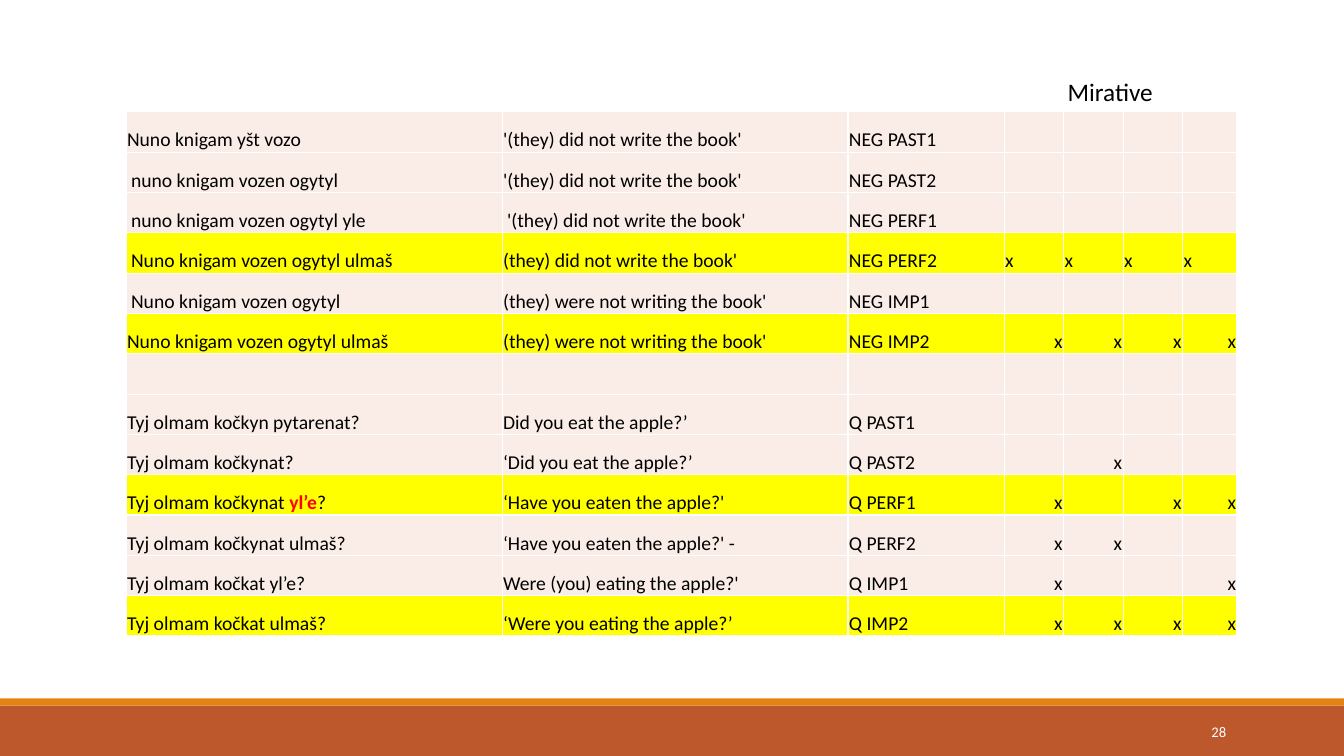
"""Build a slide with a table of negated and interrogative verb forms marked for mirativity."""
import dataclasses

import lxml.etree
import pptx
import pptx.dml.color
import pptx.enum.shapes
import pptx.enum.text
import pptx.oxml.ns
import pptx.util

Inches = pptx.util.Inches
Align = pptx.enum.text.PP_ALIGN
Anchor = pptx.enum.text.MSO_ANCHOR


@dataclasses.dataclass(frozen=True)
class Theme:
    font: str = "Calibri"
    ink: str = "000000"
    white: str = "FFFFFF"
    accent: str = "FF0000"
    plain_row: str = "FAEDE7"
    marked_row: str = "FFFF00"
    footer: str = "BD582C"
    stripe: str = "E48312"
    table_size: float = 14
    heading_size: float = 18
    number_size: float = 10.5


THEME = Theme()
SLIDE_SIZE = (13.33, 7.5)
HEADING = "Mirative"
PAGE_NUMBER = "28"

ROWS = [
    ("Nuno knigam yšt vozo", "'(they) did not write the book'", "NEG PAST1", "----"),
    ("nuno knigam vozen ogytyl", "'(they) did not write the book'", "NEG PAST2", "----"),
    ("nuno knigam vozen ogytyl yle", "'(they) did not write the book'", "NEG PERF1", "----"),
    ("Nuno knigam vozen ogytyl ulmaš", "(they) did not write the book'", "NEG PERF2", "xxxx"),
    ("Nuno knigam vozen ogytyl", "(they) were not writing the book'", "NEG IMP1", "----"),
    ("Nuno knigam vozen ogytyl ulmaš", "(they) were not writing the book'", "NEG IMP2", "xxxx"),
    ("", "", "", "----"),
    ("Tyj olmam kočkyn pytarenat?", "Did you eat the apple?’", "Q PAST1", "----"),
    ("Tyj olmam kočkynat?", "‘Did you eat the apple?’", "Q PAST2", "-x--"),
    ("Tyj olmam kočkynat |yl’e|?", "‘Have you eaten the apple?'", "Q PERF1", "x-xx"),
    ("Tyj olmam kočkynat ulmaš?", "‘Have you eaten the apple?' -", "Q PERF2", "xx--"),
    ("Tyj olmam kočkat yl’e?", "Were (you) eating the apple?'", "Q IMP1", "x--x"),
    ("Tyj olmam kočkat ulmaš?", "‘Were you eating the apple?’", "Q IMP2", "xxxx"),
]
HIGHLIGHTED = {3, 5, 9, 12}
LEFT_MARKS = {3}
INDENTED = {(1, 0), (2, 0), (2, 1), (3, 0), (4, 0)}

TABLE_AT = (1.25, 1.11)
COLUMN_WIDTHS = [3.73, 3.43, 1.55, 0.59, 0.59, 0.59, 0.54]
ROW_HEIGHT = 0.4
TEXT_COLUMNS = 3
CELL_MARGIN = 0.01
CELL_INDENT = 0.05
BORDER_WIDTH = 1

BANDS = [
    ((0, 7, 13.33, 0.5), THEME.footer),
    ((0, 6.93, 13.33, 0.07), THEME.stripe),
]
LABELS = [
    (PAGE_NUMBER, (10.83, 7.06, 1.43, 0.4), THEME.number_size, THEME.white,
     {"word_wrap": True, "vertical_anchor": Anchor.MIDDLE}, Align.RIGHT),
    (HEADING, (10.49, 0.71, 1.06, 0.4), THEME.heading_size, THEME.ink,
     {"word_wrap": False, "vertical_anchor": Anchor.TOP}, Align.LEFT),
]


def rgb(value):
    return pptx.dml.color.RGBColor.from_string(value)


def apply(target, values):
    for name, value in values.items():
        setattr(target, name, value)


def set_font(font, size, color, bold=False):
    apply(font, {"name": THEME.font, "size": pptx.util.Pt(size), "bold": bold})
    font.color.rgb = rgb(color)


def add_band(page, place, color):
    band = page.shapes.add_shape(
        pptx.enum.shapes.MSO_SHAPE.RECTANGLE, *map(Inches, place))
    band.shadow.inherit = False
    band.fill.solid()
    band.fill.fore_color.rgb = rgb(color)
    band.line.fill.background()


def add_label(page, text, place, size, color, frame_format, alignment):
    box = page.shapes.add_textbox(*map(Inches, place))
    apply(box.text_frame, frame_format)
    para = box.text_frame.paragraphs[0]
    para.alignment = alignment
    span = para.add_run()
    span.text = text
    set_font(span.font, size, color)


def add_borders(cell):
    properties = cell._tc.get_or_add_tcPr()
    qualified = pptx.oxml.ns.qn
    for side in ("lnL", "lnR", "lnT", "lnB"):
        line = lxml.etree.SubElement(properties, qualified(f"a:{side}"))
        line.set("w", str(pptx.util.Pt(BORDER_WIDTH)))
        fill = lxml.etree.SubElement(line, qualified("a:solidFill"))
        lxml.etree.SubElement(fill, qualified("a:srgbClr")).set("val", THEME.white)


def fill_cell(cell, text, fill, alignment, indent):
    add_borders(cell)
    cell.fill.solid()
    cell.fill.fore_color.rgb = rgb(fill)
    apply(cell, {
        "margin_left": Inches(indent),
        "margin_right": Inches(CELL_MARGIN),
        "margin_top": Inches(CELL_MARGIN),
        "margin_bottom": 0,
        "vertical_anchor": Anchor.BOTTOM,
    })
    para = cell.text_frame.paragraphs[0]
    para.alignment = alignment
    set_font(para.font, THEME.table_size, THEME.ink)
    for index, part in enumerate(text.split("|") if text else []):
        emphasised = index % 2 == 1
        span = para.add_run()
        span.text = part
        set_font(span.font, THEME.table_size,
                 THEME.accent if emphasised else THEME.ink, emphasised)


def add_forms_table(page):
    size = (sum(COLUMN_WIDTHS), ROW_HEIGHT * len(ROWS))
    table = page.shapes.add_table(
        len(ROWS), len(COLUMN_WIDTHS), *map(Inches, TABLE_AT + size)).table
    apply(table, {"first_row": False, "horz_banding": False})
    for column, width in zip(table.columns, COLUMN_WIDTHS):
        column.width = Inches(width)
    for row_index, (*texts, marks) in enumerate(ROWS):
        table.rows[row_index].height = Inches(ROW_HEIGHT)
        fill = THEME.marked_row if row_index in HIGHLIGHTED else THEME.plain_row
        values = texts + [mark.replace("-", "") for mark in marks]
        for column_index, text in enumerate(values):
            to_left = column_index < TEXT_COLUMNS or row_index in LEFT_MARKS
            indented = (row_index, column_index) in INDENTED
            fill_cell(table.cell(row_index, column_index), text, fill,
                      Align.LEFT if to_left else Align.RIGHT,
                      CELL_INDENT if indented else CELL_MARGIN)


def main():
    deck = pptx.Presentation()
    width, height = map(Inches, SLIDE_SIZE)
    apply(deck, {"slide_width": width, "slide_height": height})
    page = deck.slides.add_slide(deck.slide_layouts[6])
    for band in BANDS:
        add_band(page, *band)
    add_forms_table(page)
    for label in LABELS:
        add_label(page, *label)
    deck.save("out.pptx")


if __name__ == "__main__":
    main()
